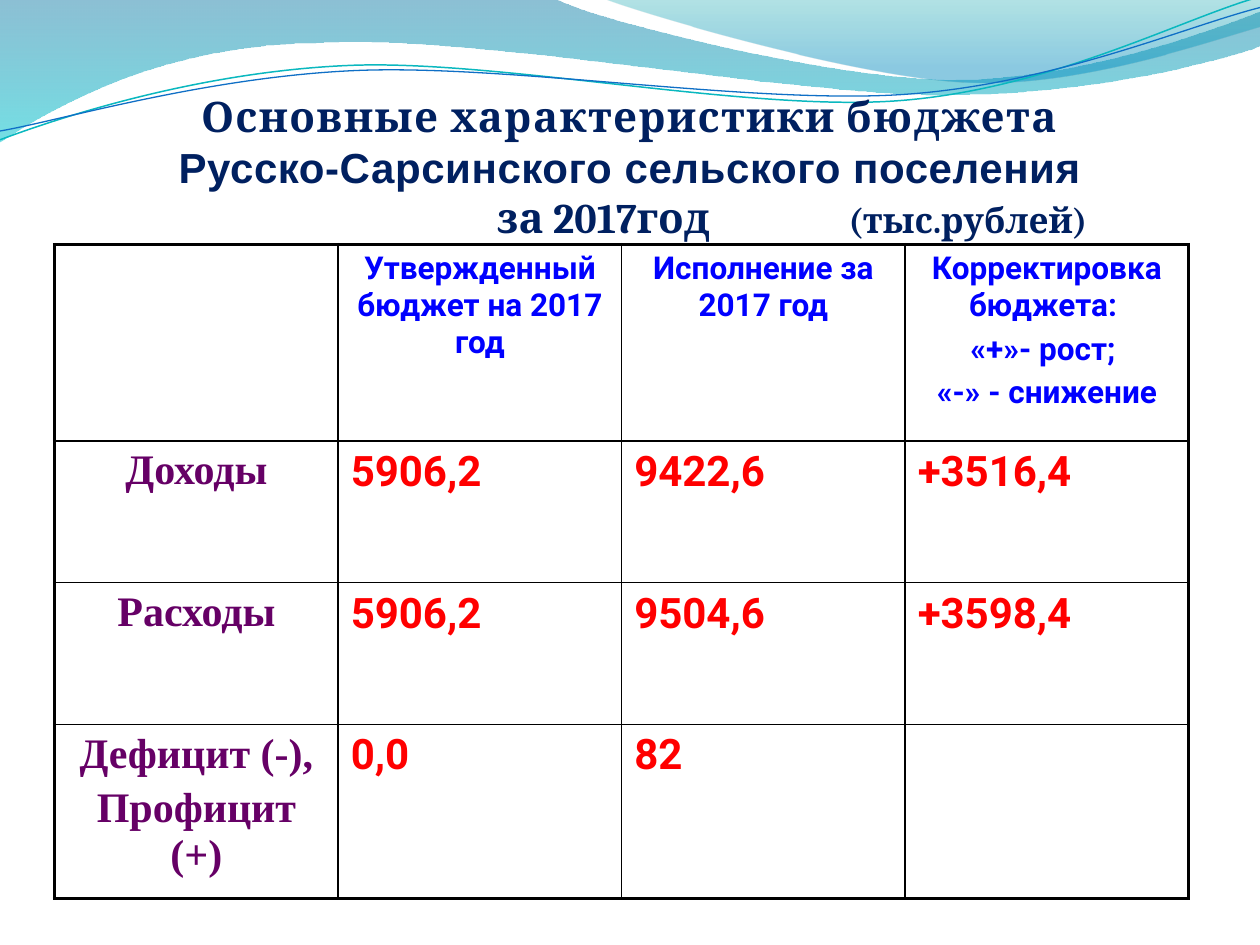
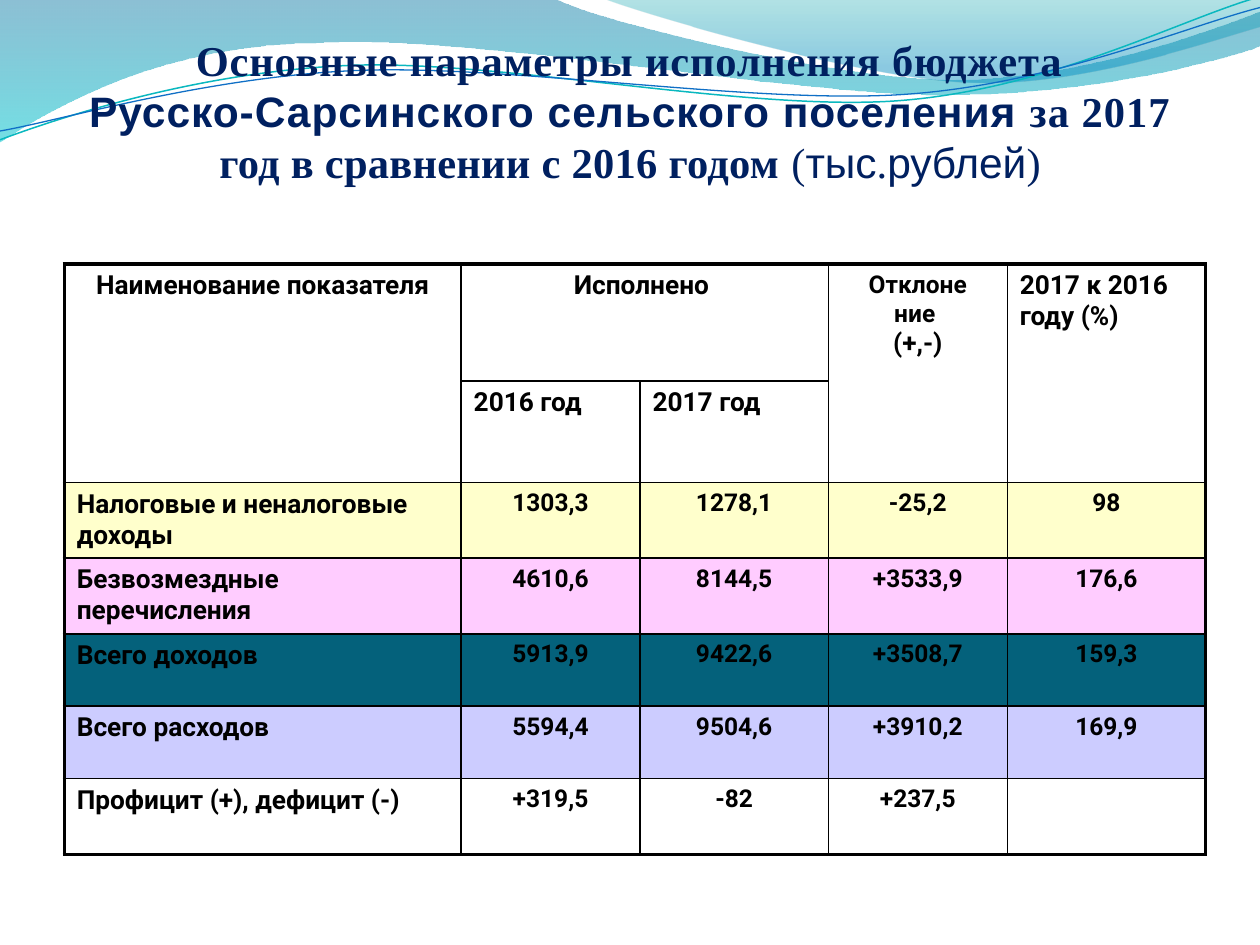
from dataclasses import dataclass
from typing import NamedTuple

from lxml.etree import Element, SubElement
from pptx import Presentation
from pptx.dml.color import RGBColor
from pptx.enum.text import MSO_ANCHOR, MSO_AUTO_SIZE, PP_ALIGN
from pptx.oxml import parse_xml
from pptx.oxml.ns import nsdecls, qn
from pptx.util import Emu, Inches, Pt

# The slide is a grid of 100 columns by 75 rows
GRID_COLUMNS, GRID_ROWS = 100, 75
UNIT = Inches(0.1)

NAVY = RGBColor(0x00, 0x20, 0x60)
BLACK = RGBColor(0x00, 0x00, 0x00)
BLUE = RGBColor(0x00, 0x00, 0xFF)
RED = RGBColor(0xFF, 0x00, 0x00)
PURPLE = RGBColor(0x66, 0x00, 0x66)
CREAM = RGBColor(0xFF, 0xFF, 0xCC)
PINK = RGBColor(0xFF, 0xCC, 0xFF)
PETROL = RGBColor(0x04, 0x61, 0x7B)
LILAC = RGBColor(0xCC, 0xCC, 0xFF)
WAVE_DEEP = RGBColor(0x00, 0x74, 0xA1)
WAVE_CYAN = RGBColor(0x00, 0xC6, 0xCF)
WAVE_TEAL = RGBColor(0x00, 0xA1, 0xA9)
WAVE_BLUE = RGBColor(0x00, 0x8B, 0xBF)
LINE_TEAL = RGBColor(0x0A, 0xB8, 0xBF)
LINE_BLUE = RGBColor(0x0F, 0x6F, 0xC6)

SERIF, SANS, TABLE_FONT, TITLE_SERIF = "Times New Roman", "Arial", "Roboto", "Cambria"
LEFT, CENTER = PP_ALIGN.LEFT, PP_ALIGN.CENTER
OUTER_BORDER, INNER_BORDER = Pt(2.25), Pt(1)


class Stop(NamedTuple):
    position: int
    color: RGBColor
    opacity: int


@dataclass(frozen=True)
class Wave:
    """A start point, then line points (2 numbers) or curves (6 numbers)."""
    start: tuple[float, float]
    segments: tuple[tuple[float, ...], ...]
    stops: tuple[Stop, ...] = ()
    line: RGBColor | None = None
    line_width: float = 0


class TitleRun(NamedTuple):
    text: str
    font: str
    size: float
    bold: bool = True
    tracking: float = 0
    ends_line: bool = False


class TitleParagraph(NamedTuple):
    runs: tuple[TitleRun, ...]
    tabs: tuple[float, ...] = ()


class TextStyle(NamedTuple):
    size: float
    color: RGBColor = BLACK
    align: PP_ALIGN = CENTER
    font: str = TABLE_FONT
    space_share: float = 0.2


class Cell(NamedTuple):
    text: str
    style: TextStyle
    fill: RGBColor | None = None
    rows: int = 1
    columns: int = 1


@dataclass(frozen=True)
class TableSpec:
    left: float
    top: float
    columns: tuple[float, ...]
    rows: tuple[float, ...]
    cells: list[list[Cell | None]]


WAVES = (
    Wave((0, -0.1), (
        (44, -0.1), (47.6, 1.7, 66.4, 6.3, 75.8, 6.3), (85.3, 6.3, 95.8, 2.6, 100, 0.9),
        (100.1, 3.6), (98.3, 4.4, 87, 7.6, 74.6, 7.5), (62.2, 7.5, 38.2, 2.8, 25.7, 3.4),
        (12.9, 3.5, 4.6, 8.3, -0.1, 11.3)),
        stops=(Stop(0, WAVE_DEEP, 45), Stop(100, WAVE_CYAN, 55))),
    Wave((47.9, -0.1), (
        (50.9, 1.1, 68.2, 6.2, 76.9, 6.5), (85.6, 6.9, 96.1, 3.2, 100, 2.1), (100, 0)),
        stops=(Stop(0, WAVE_TEAL, 30), Stop(80, WAVE_BLUE, 45))),
    Wave((0, 11.1), (
        (4.8, 9.3, 15.8, 5.7, 27.7, 5.2), (39.5, 4.7, 59.3, 8.9, 71.3, 8),
        (83.3, 7.1, 93.8, 1.5, 99.8, -0.2)), line=LINE_TEAL, line_width=0.85),
    Wave((0, 10.4), (
        (4.7, 9.6, 16.4, 6.1, 28.3, 5.6), (40.3, 5.1, 59.7, 8.3, 71.7, 7.5),
        (83.6, 6.7, 94.1, 2.1, 100, 0.6)), line=LINE_BLUE, line_width=0.75),
)


def grid(units: float) -> Emu:
    return Emu(round(units * UNIT))


# Shared wave band
def bend_segments(shape, wave: Wave) -> None:
    """Turn the straight segments that have control points into curves."""
    straight_lines = list(shape.element.iter(qn("a:lnTo")))
    for straight_line, segment in zip(straight_lines, wave.segments):
        if len(segment) == 2:
            continue
        curve = Element(qn("a:cubicBezTo"))
        for x, y in zip(segment[::2], segment[1::2]):
            SubElement(curve, qn("a:pt"), x=str(grid(x) - shape.left), y=str(grid(y) - shape.top))
        straight_line.getparent().replace(straight_line, curve)


def gradient(stops: tuple[Stop, ...]):
    stop_xml = "".join(
        f'<a:gs pos="{stop.position * 1000}"><a:srgbClr val="{stop.color}">'
        f'<a:alpha val="{stop.opacity * 1000}"/></a:srgbClr></a:gs>' for stop in stops)
    return parse_xml(f'<a:gradFill {nsdecls("a")} rotWithShape="1"><a:gsLst>{stop_xml}</a:gsLst>'
                     '<a:lin ang="5400000" scaled="0"/></a:gradFill>')


def add_wave(slide, wave: Wave):
    builder = slide.shapes.build_freeform(*map(grid, wave.start), scale=1.0)
    builder.add_line_segments([(grid(segment[-2]), grid(segment[-1]))
                               for segment in wave.segments], close=bool(wave.stops))
    shape = builder.convert_to_shape()
    bend_segments(shape, wave)
    shape.shadow.inherit = False
    shape.fill.background()
    if wave.stops:
        shape.line.fill.background()
        no_fill = shape.element.spPr.find(qn("a:noFill"))
        shape.element.spPr.replace(no_fill, gradient(wave.stops))
    else:
        shape.line.color.rgb = wave.line
        shape.line.width = Pt(wave.line_width)
    return shape


def move_waves_to_layout(slide, layout) -> None:
    for index, wave in enumerate(WAVES):
        element = add_wave(slide, wave).element
        element.nvSpPr.cNvPr.set("id", str(100 + index))
        layout.shapes.element.insert(2 + index, element)


# Titles
def add_title_run(paragraph, title_run: TitleRun) -> None:
    run = paragraph.add_run()
    run.text = title_run.text
    run.font.name, run.font.size = title_run.font, Pt(title_run.size)
    run.font.bold = title_run.bold
    run.font.color.rgb = NAVY
    if title_run.tracking:
        run._r.get_or_add_rPr().set("spc", str(round(title_run.tracking * 100)))
    if title_run.ends_line:
        paragraph.add_line_break()
        SubElement(paragraph._p[-1], qn("a:rPr"), sz=str(round(title_run.size * 100)))


def format_title(slide, top: float, paragraphs: list[TitleParagraph],
                 bottom_inset: float = 0) -> None:
    title = slide.shapes.title
    title.left, title.top = grid(5), grid(top)
    title.width, title.height = grid(90), grid(15)
    frame = title.text_frame
    frame.word_wrap = True
    frame.auto_size = MSO_AUTO_SIZE.NONE
    frame.vertical_anchor = MSO_ANCHOR.BOTTOM
    frame.margin_left = frame.margin_right = 0
    frame.margin_top, frame.margin_bottom = grid(0.5), grid(bottom_inset)
    for index, content in enumerate(paragraphs):
        paragraph = frame.paragraphs[0] if index == 0 else frame.add_paragraph()
        paragraph.alignment = LEFT if content.tabs else CENTER
        if content.tabs:
            tab_list = SubElement(paragraph._p.get_or_add_pPr(), qn("a:tabLst"))
            for position in content.tabs:
                SubElement(tab_list, qn("a:tab"), pos=str(grid(position)), algn="l")
        for title_run in content.runs:
            add_title_run(paragraph, title_run)


# Tables
def set_borders(cell, outer_sides: dict[str, bool]) -> None:
    properties = cell._tc.get_or_add_tcPr()
    for index, (side, is_outer) in enumerate(outer_sides.items()):
        width = OUTER_BORDER if is_outer else INNER_BORDER
        properties.insert(index, parse_xml(
            f'<a:ln{side} {nsdecls("a")} w="{width}"><a:solidFill><a:srgbClr val="{BLACK}"/>'
            f'</a:solidFill></a:ln{side}>'))


def fill_cell(cell, content: Cell) -> None:
    style = content.style
    cell.text_frame.text = content.text
    for index, paragraph in enumerate(cell.text_frame.paragraphs):
        paragraph.alignment = style.align
        if index:
            paragraph.space_before = Pt(style.size * style.space_share)
        for run in paragraph.runs:
            run.font.name, run.font.size = style.font, Pt(style.size)
            run.font.bold = True
            run.font.color.rgb = style.color


def add_table(slide, spec: TableSpec):
    row_count, column_count = len(spec.rows), len(spec.columns)
    table = slide.shapes.add_table(
        row_count, column_count, grid(spec.left), grid(spec.top),
        grid(sum(spec.columns)), grid(sum(spec.rows))).table
    table.first_row = table.horz_banding = False
    for column, width in zip(table.columns, spec.columns):
        column.width = grid(width)
    for row, height in zip(table.rows, spec.rows):
        row.height = grid(height)
    for r, contents in enumerate(spec.cells):
        for c, content in enumerate(contents):
            cell = table.cell(r, c)
            if content and content.fill:
                cell.fill.solid()
                cell.fill.fore_color.rgb = content.fill
            else:
                cell.fill.background()
            set_borders(cell, {"L": c == 0, "R": c == column_count - 1,
                               "T": r == 0, "B": r == row_count - 1})
            if content:
                if content.rows > 1 or content.columns > 1:
                    cell.merge(table.cell(r + content.rows - 1, c + content.columns - 1))
                if content.text:
                    fill_cell(cell, content)
    return table


# Slide 1: budget characteristics
def build_characteristics(slide) -> None:
    format_title(slide, 4.2, [
        TitleParagraph((
            TitleRun("Основные характеристики бюджета", TITLE_SERIF, 24,
                     tracking=0.85, ends_line=True),
            TitleRun("Русско-Сарсинского сельского поселения", SANS, 24, tracking=0.35))),
        TitleParagraph((TitleRun("\tза 2017год", TITLE_SERIF, 24),
                        TitleRun("\t(тыс.рублей)", TITLE_SERIF, 20)), tabs=(34.4, 62.35)),
    ])
    header = TextStyle(18, BLUE)
    label = TextStyle(24, PURPLE, font=SERIF)
    amount = TextStyle(24, RED, LEFT)
    headings = ("", "Утвержденный бюджет на 2017 год", "Исполнение за 2017 год",
                "Корректировка бюджета: \n«+»- рост; \n«-» - снижение")
    figures = (("Доходы", "5906,2", "9422,6", "+3516,4"),
               ("Расходы", "5906,2", "9504,6", "+3598,4"),
               ("Дефицит (-),\nПрофицит (+)", "0,0", "82", ""))
    cells = [[Cell(text, header) for text in headings]]
    cells += [[Cell(name, label), *(Cell(value, amount) for value in values)]
              for name, *values in figures]
    add_table(slide, TableSpec(4.34, 19.4, (22.5,) * 4, (15.6, 11.25, 11.25, 13.8), cells))


# Slide 2: comparison of 2017 with 2016
def build_comparison(slide) -> None:
    size = 24.3
    format_title(slide, 2.75, [TitleParagraph((
        TitleRun("Основные параметры исполнения бюджета", SERIF, size,
                 tracking=0.5, ends_line=True),
        TitleRun("Русско-Сарсинского сельского поселения", SANS, size, tracking=0.6),
        TitleRun(" за 2017", SERIF, size, tracking=0.6),
        TitleRun(" год в сравнении с 2016 годом ", SERIF, size, tracking=0.2),
        *(TitleRun(text, font, size, bold=False) for text, font in (
            ("(", SERIF), ("тыс", SANS), (".", SERIF), ("рублей", SANS), (")", SERIF)))))],
        bottom_inset=2.9)
    heading = TextStyle(15)
    label = TextStyle(15, align=LEFT)
    amount = TextStyle(14)
    deviation = TextStyle(14, space_share=0)
    figures = (
        (CREAM, "Налоговые и неналоговые доходы", "1303,3", "1278,1", "-25,2", "98"),
        (PINK, "Безвозмездные перечисления", "4610,6", "8144,5", "+3533,9", "176,6"),
        (PETROL, "Всего доходов", "5913,9", "9422,6", "+3508,7", "159,3"),
        (LILAC, "Всего расходов", "5594,4", "9504,6", "+3910,2", "169,9"),
        (None, "Профицит (+), дефицит (-)", "+319,5", "-82", "+237,5", ""))
    cells = [
        [Cell("Наименование показателя", heading, rows=2), Cell("Исполнено ", heading, columns=2),
         None, Cell("Отклоне\nние \n(+,-)", deviation, rows=2),
         Cell("2017 к 2016 году (%)", label, rows=2)],
        [None, Cell("2016 год", label), Cell("2017 год", label), None, None]]
    cells += [[Cell(name, label, fill), *(Cell(value, amount, fill) for value in values)]
              for fill, name, *values in figures]
    table = add_table(slide, TableSpec(5.1, 20.95, (31.5, 14.2, 14.95, 14.2, 15.75),
                                       (9.3, 8.05, 6, 6, 5.75, 5.75, 6), cells))
    table.cell(0, 3).text_frame.paragraphs[-1].runs[0].font.size = Pt(heading.size)


def main() -> None:
    presentation = Presentation()
    presentation.slide_width, presentation.slide_height = grid(GRID_COLUMNS), grid(GRID_ROWS)
    layout = presentation.slide_layouts.get_by_name("Title Only")
    slides = [presentation.slides.add_slide(layout) for _ in range(2)]
    move_waves_to_layout(slides[0], layout)
    build_characteristics(slides[0])
    build_comparison(slides[1])
    presentation.save("out.pptx")


if __name__ == "__main__":
    main()
